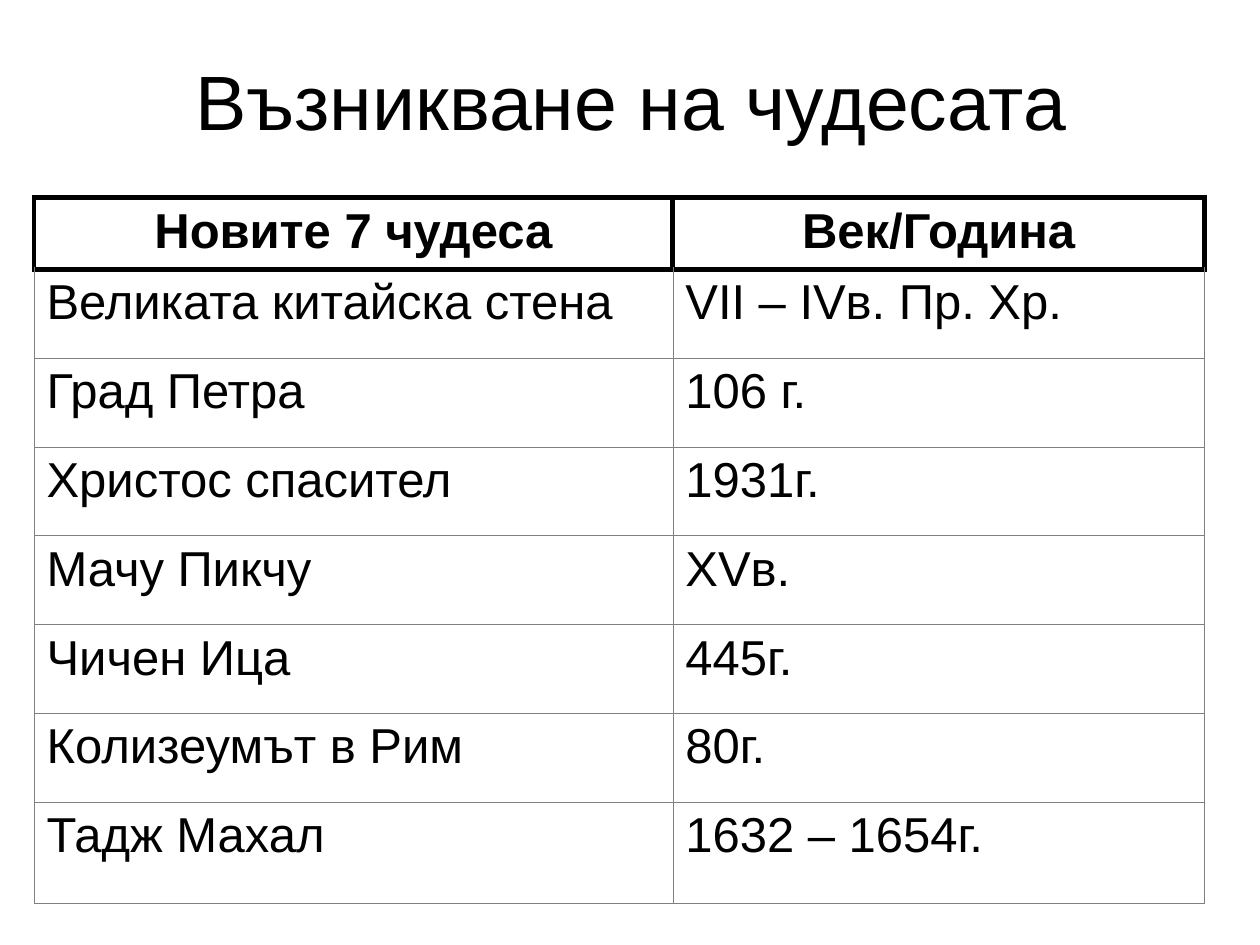
from pptx import Presentation
from pptx.dml.color import RGBColor
from pptx.enum.text import MSO_ANCHOR, PP_ALIGN
from pptx.oxml.ns import qn
from pptx.util import Inches, Pt
from lxml.etree import SubElement

BLACK = RGBColor(0x00, 0x00, 0x00)
GRAY = RGBColor(0x80, 0x80, 0x80)
HEAVY = (BLACK, 3)
THIN = (GRAY, 0.25)

WONDERS = [
    ("Новите 7 чудеса", "Век/Година"),
    ("Великата китайска стена", "VІІ – ІVв. Пр. Хр."),
    ("Град Петра", "106 г."),
    ("Христос спасител", "1931г."),
    ("Мачу Пикчу", "ХVв."),
    ("Чичен Ица", "445г."),
    ("Колизеумът в Рим", "80г."),
    ("Тадж Махал", "1632 – 1654г."),
]
COLUMN_SHARES = [50.7, 42.2]
ROW_SHARES = [7.07] + [9.4] * 6 + [10.67]


def write(frame, text, size=28, bold=False, align=PP_ALIGN.LEFT, font="Arial", color=BLACK):
    paragraph = frame.paragraphs[0]
    paragraph.alignment = align
    run = paragraph.add_run()
    run.text = text
    run.font.name = font
    run.font.size = Pt(size)
    run.font.bold = bold
    run.font.color.rgb = color


def draw_borders(cell, **edges):
    properties = cell._tc.get_or_add_tcPr()
    for position, side in enumerate("LRTB"):
        color, width = edges[side]
        line = SubElement(properties, qn(f"a:ln{side}"), w=str(Pt(width)))
        fill = SubElement(line, qn("a:solidFill"))
        SubElement(fill, qn("a:srgbClr"), val=str(color))
        properties.remove(line)
        properties.insert(position, line)


class Page:
    """Places elements on a slide by percent of its width and height."""

    def __init__(self, deck):
        self.width, self.height = deck.slide_width, deck.slide_height
        self.slide = deck.slides.add_slide(deck.slide_layouts[6])

    def across(self, share):
        return round(self.width * share / 100)

    def down(self, share):
        return round(self.height * share / 100)

    def box(self, left, top, width, height):
        return self.across(left), self.down(top), self.across(width), self.down(height)

    def title(self, text, *place):
        frame = self.slide.shapes.add_textbox(*self.box(*place)).text_frame
        frame.word_wrap = True
        frame.vertical_anchor = MSO_ANCHOR.MIDDLE
        write(frame, text, size=44, align=PP_ALIGN.CENTER)

    def table(self, records, left, top, columns, rows):
        place = self.box(left, top, sum(columns), sum(rows))
        grid = self.slide.shapes.add_table(len(rows), len(columns), *place).table
        grid.first_row = grid.horz_banding = False
        for column, share in zip(grid.columns, columns):
            column.width = self.across(share)
        for index, (row, share, record) in enumerate(zip(grid.rows, rows, records)):
            row.height = self.down(share)
            heading = index == 0
            side = HEAVY if heading else THIN
            upper = HEAVY if index <= 1 else THIN
            align = PP_ALIGN.CENTER if heading else PP_ALIGN.LEFT
            for cell, text in zip(row.cells, record):
                cell.fill.background()
                write(cell.text_frame, text, bold=heading, align=align)
                draw_borders(cell, L=side, R=side, T=upper, B=side)


def main():
    deck = Presentation()
    deck.slide_width, deck.slide_height = Inches(10), Inches(7.5)
    page = Page(deck)
    page.title("Възникване на чудесата", 5.1, 3.73, 90, 13.6)
    page.table(WONDERS, 2.7, 20.93, COLUMN_SHARES, ROW_SHARES)
    deck.save("out.pptx")


if __name__ == "__main__":
    main()
